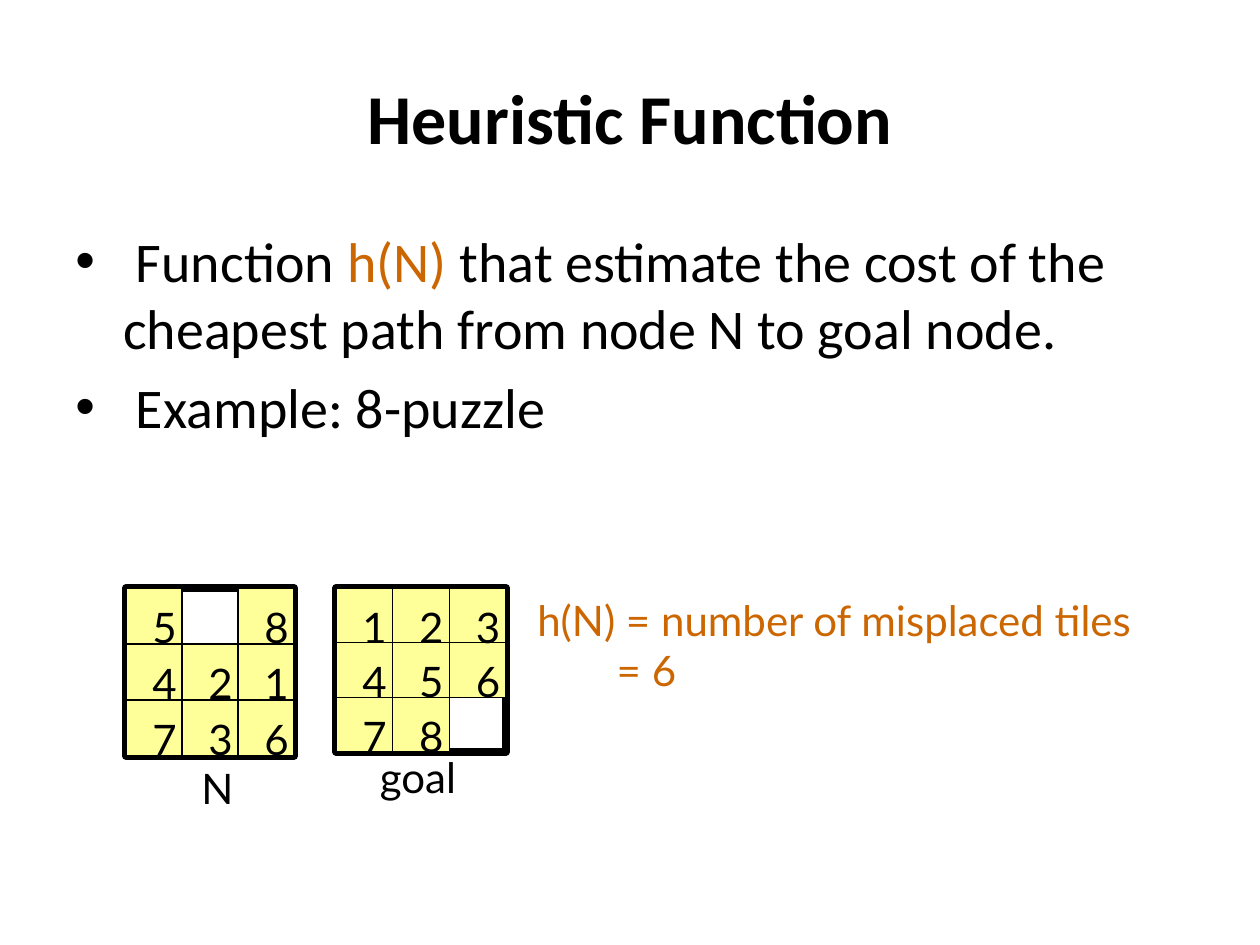
from itertools import product

from lxml.etree import SubElement
from pptx import Presentation
from pptx.dml.color import RGBColor as RGB
from pptx.enum.shapes import MSO_SHAPE as Shape
from pptx.enum.text import MSO_ANCHOR as Anchor, MSO_AUTO_SIZE as Auto, PP_ALIGN as Align
from pptx.oxml.ns import qn
from pptx.util import Inches, Pt

INK = {"text": "000000", "accent": "CC6600", "tile": "FFFF99"}
COLS, ROWS = 90, 67.5  # slide grid, nine units to the inch
NODE = ["5 8", "421", "736"]
GOAL = ["123", "456", "78 "]

deck = Presentation()
deck.slide_width, deck.slide_height = Inches(10), Inches(7.5)


def place(box):
    """Turn grid units into slide lengths."""
    x, y, w, h = box
    wide, high = deck.slide_width / COLS, deck.slide_height / ROWS
    return [int(v) for v in (x * wide, y * high, w * wide, h * high)]


def write(parent, box, paras, size=24, font="Lato", color="text", bold=False,
          align=Align.LEFT, anchor=Anchor.TOP, wrap=False, before=0,
          bullet=False, indents=()):
    """Add text; paras is a string or lists of (text, color) runs."""
    item = parent.shapes.add_textbox(*place(box))
    frame = item.text_frame
    frame.word_wrap = wrap
    frame.auto_size = Auto.NONE if wrap else Auto.SHAPE_TO_FIT_TEXT
    frame.vertical_anchor = anchor
    if isinstance(paras, str):
        paras = [[(paras, color)]]
    for i, runs in enumerate(paras):
        para = frame.add_paragraph() if i else frame.paragraphs[0]
        para.alignment, para.space_before = align, Pt(before)
        props = para._p.get_or_add_pPr()
        if indents:
            props.set("marL", str(Inches(indents[i])))
        if bullet:
            props.set("indent", str(-Inches(indents[i])))
            SubElement(props, qn("a:buFont"), typeface="Arial")
            SubElement(props, qn("a:buChar"), char="•")
        for text, tint in runs:
            run = para.add_run()
            run.text = text
            run.font.name, run.font.size, run.font.bold = font, Pt(size), bold
            run.font.color.rgb = RGB.from_string(INK[tint])


def square(parent, box, weight, fill=None):
    item = parent.shapes.add_shape(Shape.RECTANGLE, *place(box))
    item.shadow.inherit = False
    item.line.color.rgb = RGB.from_string(INK["text"])
    item.line.width = Pt(weight)
    if fill:
        item.fill.solid()
        item.fill.fore_color.rgb = RGB.from_string(INK[fill])
    else:
        item.fill.background()


def board(slide, box, rows):
    """Draw a framed 3 by 3 puzzle, leaving the blank square open."""
    x, y, w, h = box
    group = slide.shapes.add_group_shape()
    square(group, box, 4.5)
    tiles = [(x + c * w / 3, y + r * h / 3, rows[r][c])
             for r, c in product(range(3), repeat=2) if rows[r][c] != " "]
    for left, top, _ in tiles:
        square(group, (left, top, w / 3, h / 3), 0.75, "tile")
    for left, top, digit in tiles:
        write(group, (left + 1, top + 0.5, 3.4, 4.5), digit)


def header(slide, box):
    write(slide, box, "Heuristic Function", size=40, font="Calibri", bold=True,
          align=Align.CENTER, anchor=Anchor.MIDDLE, wrap=True)


def body(slide, box):
    points = [
        [(" Function ", "text"), ("h(N)", "accent"),
         (" that estimate the cost of the cheapest path from node N to goal node.", "text")],
        [(" Example: 8-puzzle", "text")],
    ]
    write(slide, box, points, size=32, font="Calibri", wrap=True, before=6.4,
          bullet=True, indents=(0.38, 0.38))


def example(slide, box):
    """Place both boards, their labels and the heuristic value."""
    x, y, w, h = box
    board(slide, (x, y, 12, 12), NODE)
    board(slide, (x + 15, y, 12.15, 11.7), GOAL)
    write(slide, (x + 4.5, y + 12, 3.8, 4.5), "N")
    write(slide, (x + 17.25, y + 11.25, 7.4, 4.5), "goal")
    value = [[("h(N) = number of misplaced tiles", "accent")], [("= 6", "accent")]]
    write(slide, (x + 28.5, y, w - 28.5, h / 2), value, wrap=True, indents=(0, 0.63))


def main():
    slide = deck.slides.add_slide(deck.slide_layouts[6])
    header(slide, (4.5, 2.7, 81, 11.25))
    body(slide, (4.5, 15.75, 81, 44.55))
    example(slide, (9, 42, 74.3, 16.5))
    deck.save("out.pptx")


if __name__ == "__main__":
    main()
